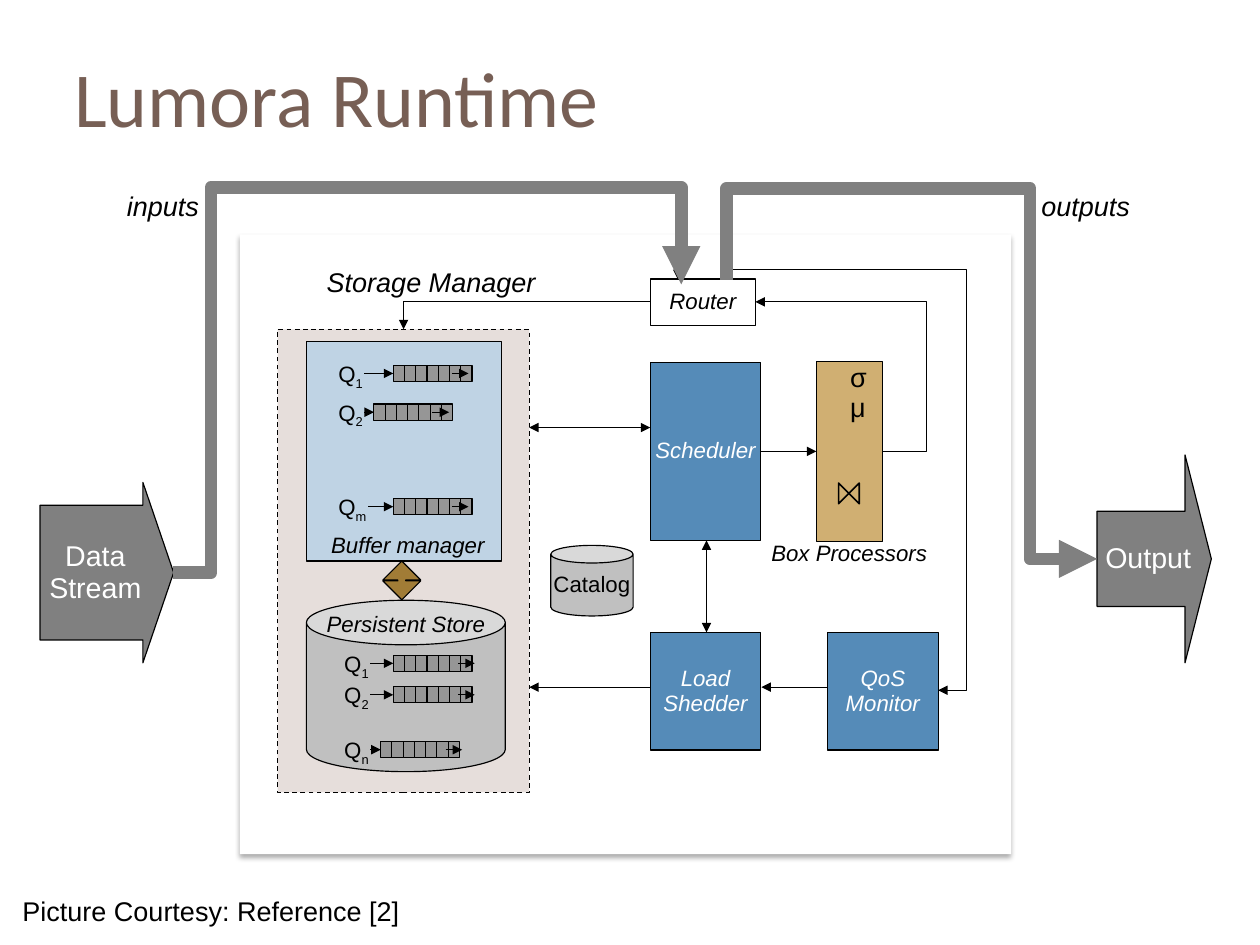
from lxml.etree import SubElement
from pptx import Presentation
from pptx.dml.color import RGBColor
from pptx.enum.dml import MSO_LINE
from pptx.enum.shapes import MSO_CONNECTOR as CONNECTOR, MSO_SHAPE as SHAPE
from pptx.enum.text import MSO_ANCHOR as ANCHOR, PP_ALIGN as ALIGN
from pptx.oxml.ns import qn
from pptx.util import Cm, Pt

BLACK = RGBColor(0x00, 0x00, 0x00)
WHITE = RGBColor(0xFF, 0xFF, 0xFF)
BROWN = RGBColor(0x77, 0x5F, 0x55)
GRAY = RGBColor(0x80, 0x80, 0x80)
CELL_GRAY = RGBColor(0x96, 0x96, 0x96)
STORE_GRAY = RGBColor(0xC0, 0xC0, 0xC0)
STORAGE_BEIGE = RGBColor(0xE6, 0xDE, 0xDB)
BUFFER_BLUE = RGBColor(0xBF, 0xD3, 0xE4)
BLUE = RGBColor(0x55, 0x8B, 0xB8)
GOLD = RGBColor(0xD0, 0xAF, 0x72)
DARK_GOLD = RGBColor(0xA1, 0x7C, 0x36)

CELL_COUNT, CELL_WIDTH, CELL_HEIGHT = 7, 0.25, 0.36


def format_text(frame, size, color, italic=False, font="Arial", spacing=0.93, align=ALIGN.LEFT):
    """Apply one style to all the text of a frame."""
    for paragraph in frame.paragraphs:
        paragraph.alignment = align
        paragraph.line_spacing = spacing
        for run in paragraph.runs:
            run.font.name = font
            run.font.size = Pt(size)
            run.font.italic = italic
            run.font.color.rgb = color


def add_label(shapes, text, left, top, width, height=0.94, size=17, italic=True, color=BLACK, **style):
    """Add a text box and return it."""
    label = shapes.add_textbox(Cm(left), Cm(top), Cm(width), Cm(height))
    frame = label.text_frame
    frame.word_wrap = True
    frame.text = text
    format_text(frame, size, color, italic, **style)
    return label


def add_box(shapes, kind, left, top, width, height, fill=None, line=0.75, adjustments=()):
    """Add a preset shape with an optional fill and black outline."""
    box = shapes.add_shape(kind, Cm(left), Cm(top), Cm(width), Cm(height))
    box.shadow.inherit = False
    if fill is None:
        box.fill.background()
    else:
        box.fill.solid()
        box.fill.fore_color.rgb = fill
    if line:
        box.line.color.rgb = BLACK
        box.line.width = Pt(line)
    else:
        box.line.fill.background()
    for index, value in enumerate(adjustments):
        box.adjustments[index] = value
    return box


def write_in(box, text, size=14, color=WHITE, italic=True):
    """Write centred text inside a shape."""
    frame = box.text_frame
    frame.word_wrap = False
    frame.vertical_anchor = ANCHOR.MIDDLE
    frame.text = text
    format_text(frame, size, color, italic, align=ALIGN.CENTER)


def add_panel(shapes):
    """Add the white panel with its soft shadow."""
    panel = add_box(shapes, SHAPE.RECTANGLE, 5.33, 5.21, 17.14, 13.77, WHITE, line=0)
    effects = panel._element.spPr.find(qn("a:effectLst"))
    shadow = SubElement(effects, qn("a:outerShdw"), blurRad=str(Pt(3.5)),
                        dist=str(Pt(2.2)), dir="5400000", rotWithShape="0")
    color = SubElement(shadow, qn("a:srgbClr"), val="000000")
    SubElement(color, qn("a:alpha"), val="32000")


def add_arrow(shapes, begin, end, kind=CONNECTOR.STRAIGHT, color=BLACK, width=0.75, both=False):
    """Add a connector with a triangle at its end, or at both ends."""
    arrow = shapes.add_connector(kind, *map(Cm, begin + end))
    arrow.line.color.rgb = color
    arrow.line.width = Pt(width)
    line = arrow.line._get_or_add_ln()
    if both:
        SubElement(line, qn("a:headEnd"), type="triangle")
    SubElement(line, qn("a:tailEnd"), type="triangle")
    SubElement(arrow._element.spPr, qn("a:effectLst"))
    return arrow


def add_elbow(shapes, begin, end, preset, adjustments=(), upward=False, **style):
    """Add a bent arrow, turned a quarter when it leaves upward."""
    if upward:
        middle_x, middle_y = (begin[0] + end[0]) / 2, (begin[1] + end[1]) / 2
        half_x, half_y = (end[0] - begin[0]) / 2, (end[1] - begin[1]) / 2
        begin = (middle_x + half_y, middle_y - half_x)
        end = (middle_x - half_y, middle_y + half_x)
    elbow = add_arrow(shapes, begin, end, CONNECTOR.ELBOW, **style)
    properties = elbow._element.spPr
    if upward:
        properties.find(qn("a:xfrm")).set("rot", "16200000")
    geometry = properties.find(qn("a:prstGeom"))
    geometry.set("prst", preset)
    guides = geometry.find(qn("a:avLst"))
    for number, value in enumerate(adjustments, 1):
        SubElement(guides, qn("a:gd"), name=f"adj{number}", fmla=f"val {round(value * 100000)}")


def add_queue(slide, index, label_left, label_width, cells_left, top, exit_offset):
    """Add a queue: its name, cells, entry arrow and exit arrow."""
    shapes = slide.shapes.add_group_shape().shapes
    for number in range(CELL_COUNT):
        add_box(shapes, SHAPE.RECTANGLE, cells_left + number * CELL_WIDTH, top,
                CELL_WIDTH, CELL_HEIGHT, CELL_GRAY)
    middle = top + CELL_HEIGHT / 2
    exit_left = cells_left + exit_offset
    add_arrow(shapes, (exit_left, middle), (exit_left + 0.37, middle))
    add_arrow(shapes, (label_left + label_width, middle), (cells_left, middle))
    label = add_label(shapes, "Q", label_left, top - 0.11, label_width, 0.56, 14, False)
    frame = label.text_frame
    frame.word_wrap = False
    frame.margin_left = frame.margin_right = frame.margin_top = frame.margin_bottom = 0
    subscript = frame.paragraphs[0].add_run()
    subscript.text = index
    format_text(frame, 14, BLACK)
    subscript._r.get_or_add_rPr().set("baseline", "-25000")


def add_storage(slide):
    """Add the storage manager with its buffer, store and queues."""
    shapes = slide.shapes
    storage = add_box(shapes, SHAPE.RECTANGLE, 6.17, 7.32, 5.59, 10.29, STORAGE_BEIGE)
    storage.line.dash_style = MSO_LINE.DASH
    add_box(shapes, SHAPE.RECTANGLE, 6.81, 7.59, 4.34, 4.88, BUFFER_BLUE)
    add_label(shapes, "Buffer manager", 7.11, 11.73, 4.04, 0.84, 14)
    add_label(shapes, "Storage Manager", 7.01, 5.84, 5.64)
    add_box(shapes, SHAPE.CAN, 6.81, 13.34, 4.42, 3.81, STORE_GRAY, adjustments=[0.26])
    add_label(shapes, "Persistent Store", 7.01, 13.49, 4.14, 0.84, 14)
    for index, label_width, cells_left, top in (
            ("1", 0.58, 8.74, 8.12), ("2", 0.58, 8.31, 8.98), ("m", 0.66, 8.74, 11.08)):
        add_queue(slide, index, 7.52, label_width, cells_left, top, 1.3)
    for index, cells_left, top in (("1", 8.74, 14.56), ("2", 8.74, 15.26), ("n", 8.46, 16.48)):
        add_queue(slide, index, 7.65, 0.58, cells_left, top, 1.44)
    add_box(shapes, SHAPE.UP_DOWN_ARROW, 8.51, 12.47, 0.84, 0.86, DARK_GOLD, adjustments=[0.5, 0.21])


def add_processing(shapes):
    """Add the scheduler, monitors, catalog, box processors and router."""
    for text, left, top, height in (("Scheduler", 14.45, 8.05, 3.96),
                                    ("Load\nShedder", 14.45, 14.05, 2.62),
                                    ("QoS\nMonitor", 18.39, 14.05, 2.62)):
        write_in(add_box(shapes, SHAPE.RECTANGLE, left, top, 2.46, height, BLUE), text)
    catalog = add_box(shapes, SHAPE.CAN, 12.24, 12.12, 1.83, 1.57, STORE_GRAY, adjustments=[0.25])
    write_in(catalog, "Catalog", color=BLACK, italic=False)
    add_box(shapes, SHAPE.RECTANGLE, 18.14, 8.03, 1.47, 4.01, GOLD)
    add_label(shapes, "Box Processors", 16.89, 11.91, 4.09, 0.84, 14)
    add_label(shapes, "σ\nμ", 18.64, 7.95, 0.89, 3.63, italic=False)
    for left, rotation in ((18.75, 270), (18.52, 90)):
        triangle = add_box(shapes, SHAPE.ISOSCELES_TRIANGLE, left, 10.85, 0.46, 0.23, line=1)
        triangle.rotation = rotation
    router = add_box(shapes, SHAPE.RECTANGLE, 14.45, 6.2, 2.34, 1.04)
    write_in(router, "Router", color=BLACK)


def add_flows(shapes):
    """Add the arrows between the parts and the thick input and output paths."""
    for begin, end, both in (((15.7, 12.01), (15.7, 14.05), True),
                             ((18.39, 15.27), (16.92, 15.27), False),
                             ((14.45, 15.27), (11.76, 15.27), False),
                             ((16.92, 10.03), (18.14, 10.03), False),
                             ((14.45, 9.5), (11.76, 9.5), True),
                             ((15.06, 5.49), (15.06, 6.2), False)):
        add_arrow(shapes, begin, end, both=both)
    add_elbow(shapes, (14.45, 6.71), (8.97, 7.32), "bentConnector2")
    add_elbow(shapes, (19.61, 10.03), (16.79, 6.71), "bentConnector3", [-0.349])
    add_elbow(shapes, (16.18, 6.2), (20.85, 15.34), "bentConnector4", [-0.022, 1.135], upward=True)
    thick = {"color": GRAY, "width": 8}
    add_elbow(shapes, (16.15, 6.22), (24.38, 12.42), "bentConnector4", [-0.328, 0.819],
              upward=True, **thick)
    add_elbow(shapes, (3.84, 12.73), (15.14, 6.32), "bentConnector4", [0.075, 1.336], **thick)


def main():
    """Build the runtime architecture slide."""
    presentation = Presentation()
    presentation.slide_width, presentation.slide_height = Cm(28), Cm(21)
    slide = presentation.slides.add_slide(presentation.slide_layouts[6])
    shapes = slide.shapes
    add_panel(shapes)
    add_label(shapes, "Lumora Runtime", 1.4, 0.97, 25.2, 3.25, 49, False, BROWN,
              font="Calibri", spacing=1.0)
    for text, left, top, width, height, adjustments in (
            ("Data\nStream", 0.89, 10.72, 2.97, 4.01, (0.747, 0.23)),
            ("Output", 24.38, 10.11, 2.54, 4.62, (0.458, 0.23))):
        arrow = add_box(shapes, SHAPE.RIGHT_ARROW, left, top, width, height, GRAY, adjustments=adjustments)
        write_in(arrow, text, 18, italic=False)
    add_storage(slide)
    add_processing(shapes)
    add_flows(shapes)
    add_label(shapes, "inputs", 2.57, 4.14, 2.13)
    add_label(shapes, "outputs", 22.89, 4.14, 2.51)
    add_label(shapes, "Picture Courtesy: Reference [2]", 0.25, 19.81, 8.99, italic=False)
    presentation.save("out.pptx")


if __name__ == "__main__":
    main()
